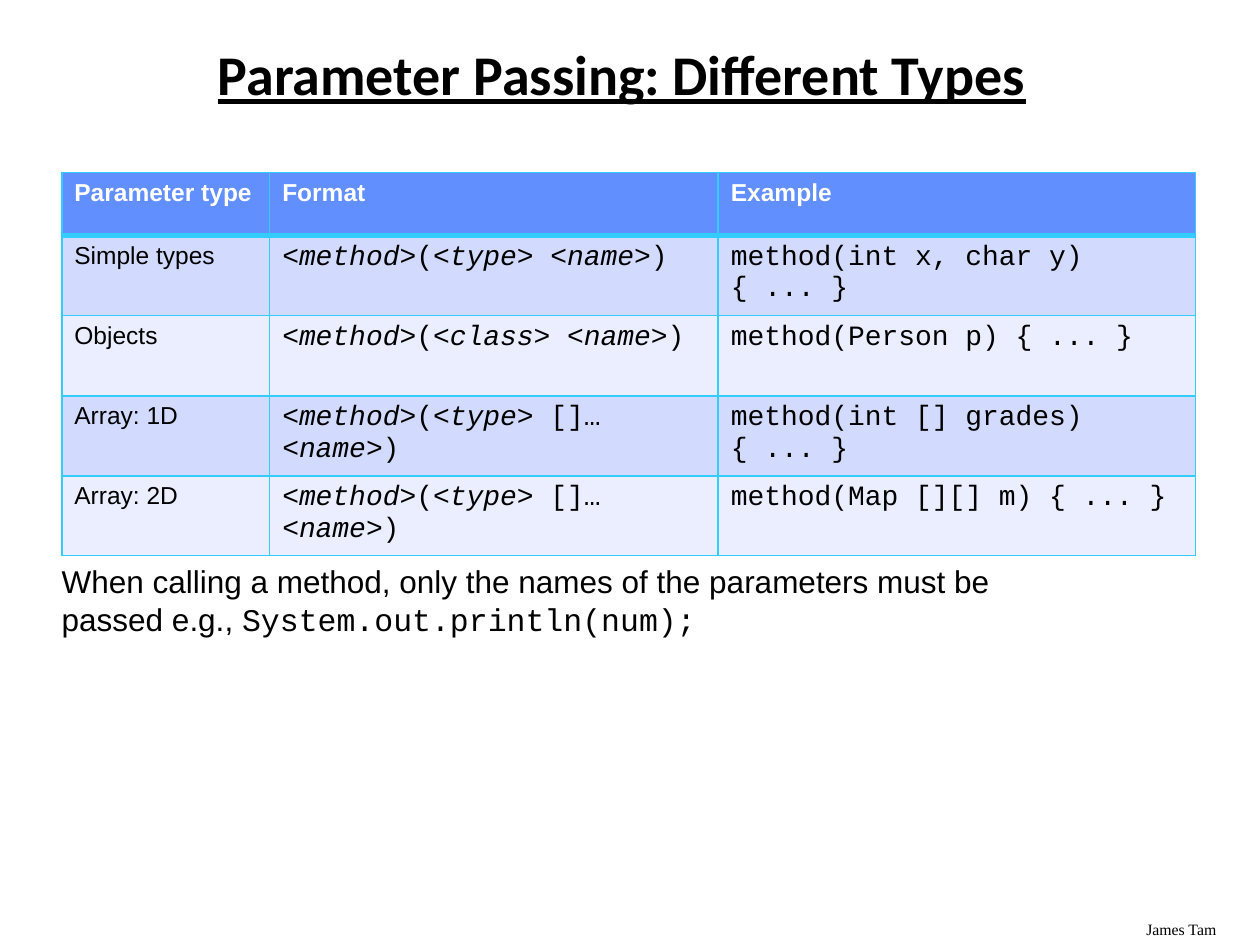
from lxml.etree import SubElement
from pptx import Presentation
from pptx.dml.color import RGBColor
from pptx.enum.text import MSO_ANCHOR, PP_ALIGN
from pptx.oxml.ns import qn
from pptx.util import Inches, Pt


def rgb(value):
    return RGBColor.from_string(value)


class SlideBuilder:
    sans, mono, serif, heading = "Arial", "Courier New", "Times New Roman", "Calibri"
    black, white, border = "000000", "FFFFFF", "33CCFF"
    header_fill = "618FFD"
    band_fills = ("D2DBFE", "EAEEFF")

    def __init__(self, prs):
        self.s = prs.slides.add_slide(prs.slide_layouts[5])
        self.s.background.fill.solid()
        self.s.background.fill.fore_color.rgb = rgb(self.white)

    def format_run(self, r, font, size, color=black, bold=False, italic=False):
        r.font.name = font
        r.font.size = Pt(size)
        r.font.color.rgb = rgb(color)
        r.font.bold = bold
        r.font.italic = italic

    def title(self, text, left, top, width, height):
        sp = self.s.shapes.title
        sp.left, sp.top = Inches(left), Inches(top)
        sp.width, sp.height = Inches(width), Inches(height)
        tf = sp.text_frame
        tf.text = text
        tf.vertical_anchor = MSO_ANCHOR.MIDDLE
        p = tf.paragraphs[0]
        p.alignment = PP_ALIGN.CENTER
        p.line_spacing = 0.9
        self.format_run(p.runs[0], self.heading, 32, bold=True)
        p.runs[0].font.underline = True

    def text(self, parts, left, top, width, height, size, inset=0.1):
        sp = self.s.shapes.add_textbox(
            Inches(left), Inches(top), Inches(width), Inches(height))
        tf = sp.text_frame
        tf.word_wrap = True
        tf.margin_left = Inches(inset)
        for text, font in parts:
            r = tf.paragraphs[0].add_run()
            r.text = text
            self.format_run(r, font, size)

    def cell_borders(self, cell, top, bottom):
        tcPr = cell._tc.get_or_add_tcPr()
        for side, width in (("L", 1), ("R", 1), ("T", top), ("B", bottom)):
            ln = SubElement(tcPr, qn(f"a:ln{side}"), w=str(Pt(width)))
            fill = SubElement(ln, qn("a:solidFill"))
            SubElement(fill, qn("a:srgbClr"), val=self.border)

    def cell(self, cell, text, fill, font, size, color, bold):
        cell.fill.solid()
        cell.fill.fore_color.rgb = rgb(fill)
        p = cell.text_frame.paragraphs[0]
        for i, part in enumerate(text.split("*")):
            r = p.add_run()
            r.text = part
            self.format_run(r, font, size, color, bold, italic=i % 2 == 1)

    def table(self, rows, left, top, col_widths, row_heights):
        tbl = self.s.shapes.add_table(
            len(rows), len(col_widths), Inches(left), Inches(top),
            Inches(sum(col_widths)), Inches(sum(row_heights))).table
        tbl.first_row = True
        tbl.horz_banding = False
        for col, width in zip(tbl.columns, col_widths):
            col.width = Inches(width)
        for i, (row, height) in enumerate(zip(rows, row_heights)):
            tbl.rows[i].height = Inches(height)
            header = i == 0
            fill = self.header_fill if header else self.band_fills[(i - 1) % 2]
            color = self.white if header else self.black
            for j, text in enumerate(row):
                code = j > 0 and not header
                font, size = (self.mono, 16) if code else (self.sans, 14)
                cell = tbl.cell(i, j)
                self.cell_borders(cell, 3 if i == 1 else 1, 3 if header else 1)
                self.cell(cell, text, fill, font, size, color, header)


def main():
    prs = Presentation()
    prs.slide_width, prs.slide_height = Inches(10), Inches(7.5)
    b = SlideBuilder(prs)
    b.text([("James Tam", b.serif)], 9, 7.25, 1, 0.25, 9)
    b.title("Parameter Passing: Different Types", 0.47, 0.33, 8.93, 0.57)
    array_format = "<*method*>(<*type*> []… <*name*>)"
    rows = [
        ("Parameter type", "Format", "Example"),
        ("Simple types", "<*method*>(<*type*> <*name*>)", "method(int x, char y) { ... }"),
        ("Objects", "<*method*>(<*class*> <*name*>)", "method(Person p) { ... }"),
        ("Array: 1D", array_format, "method(int [] grades) { ... }"),
        ("Array: 2D", array_format, "method(Map [][] m) { ... }"),
    ]
    b.table(rows, 0.49, 1.37, (1.65, 3.56, 3.79), (0.5, 0.5, 0.64, 0.5, 0.5))
    b.text([
        ("When calling a method, only the names of the parameters must be passed e.g., ", b.sans),
        ("System.out.println(num);", b.mono),
    ], 0.49, 4.41, 8.27, 0.55, 18, inset=0)
    prs.save("out.pptx")


if __name__ == "__main__":
    main()
